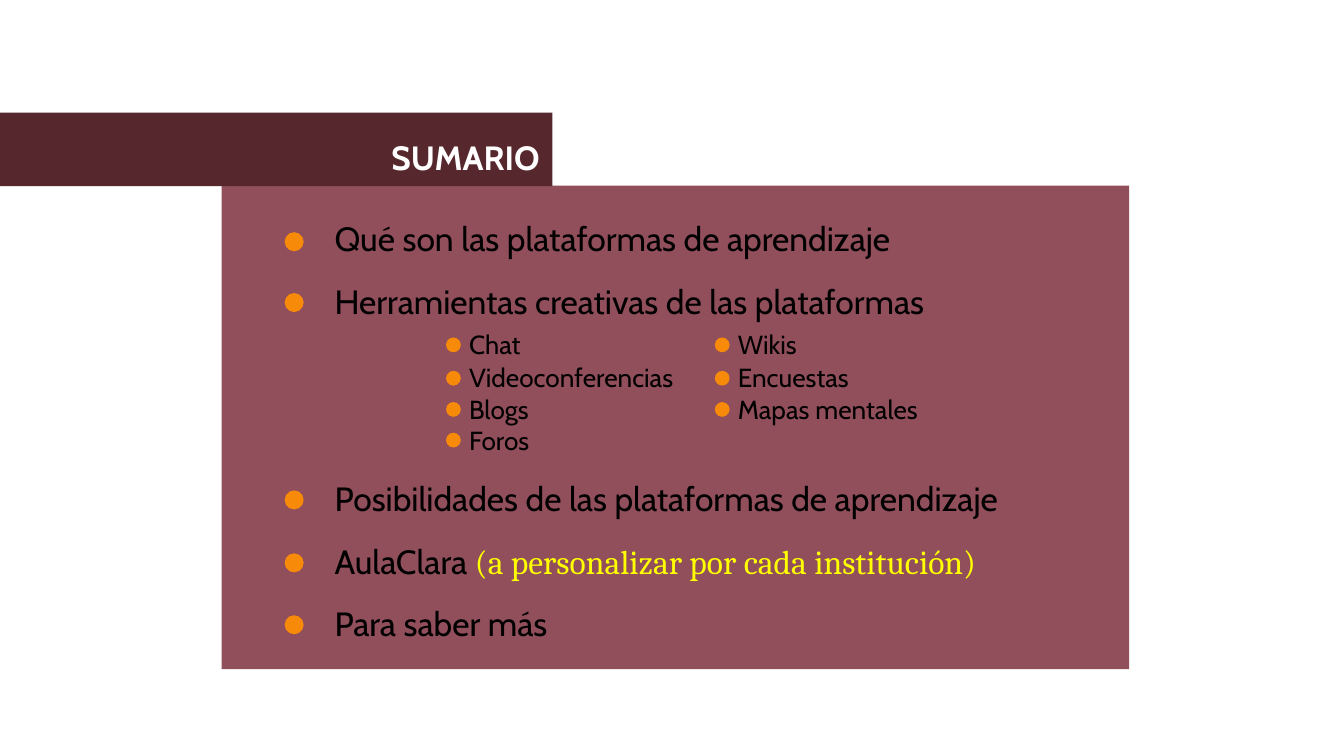
from lxml import etree
from pptx import Presentation
from pptx.dml.color import RGBColor
from pptx.enum import shapes, text
from pptx.oxml import ns
from pptx.util import Cm, Pt

WINE = RGBColor(0x56, 0x28, 0x2D)
ROSE = RGBColor(0x91, 0x4E, 0x5B)
ORANGE = RGBColor(0xF7, 0x8A, 0x08)
YELLOW = RGBColor(0xFF, 0xFF, 0x00)
BLACK = RGBColor(0, 0, 0)
WHITE = RGBColor(0xFF, 0xFF, 0xFF)

TAB_SIZE = 2.54
TOOL_DOT_X = (4.24, 9.32)

# Topics before and after the tools: dot offset in the panel, space before, runs
OPENING = [
    (0.88, 0, [("Qué son las plataformas de aprendizaje", {})]),
    (2.03, 12, [("Herramientas creativas de las plataformas", {})]),
]
CLOSING = [
    (5.76, 12, [("Posibilidades de las plataformas de aprendizaje", {})]),
    (6.95, 12, [("AulaClara ", {}),
                ("(a personalizar por cada institución)",
                 {"font": "Cambria", "color": YELLOW})]),
    (8.12, 12, [("Para saber más", {})]),
]
# Tools: dot offset in the panel, space before, names at the first and third tab
TOOLS = [
    (2.87, 4, "\tChat\t\tWikis"),
    (3.5, 1, "\tVideoconferencias\tEncuestas"),
    (4.09, 0, "\tBlogs\t\tMapas mentales"),
    (4.67, 0, "\tForos"),
]


def add_run(p, content, size=18, font="Cabin", color=BLACK, bold=False):
    r = p.add_run()
    r.text = content
    r.font.size = Pt(size)
    r.font.name = font
    r.font.color.rgb = color
    r.font.bold = bold


def add_filled(slide, kind, x, y, w, h, color):
    s = slide.shapes.add_shape(kind, Cm(x), Cm(y), Cm(w), Cm(h))
    s.shadow.inherit = False
    s.fill.solid()
    s.fill.fore_color.rgb = color
    s.line.fill.background()


def add_dot(slide, x, y, size):
    add_filled(slide, shapes.MSO_SHAPE.OVAL, x, y, size, size, ORANGE)


def place(slide, sp, x, y, w, h):
    """Move a placeholder into a box, in front of the shapes drawn so far."""
    slide.shapes._spTree.append(sp._element)
    sp.left, sp.top, sp.width, sp.height = Cm(x), Cm(y), Cm(w), Cm(h)
    tf = sp.text_frame
    tf.word_wrap = True
    tf.auto_size = text.MSO_AUTO_SIZE.NONE
    tf.vertical_anchor = text.MSO_ANCHOR.TOP
    return tf


def add_line(tf, space_before):
    """Return a new unbulleted paragraph with an even tab grid."""
    p = tf.paragraphs[0] if not tf.paragraphs[0].runs else tf.add_paragraph()
    p.line_spacing = 1.0
    p.space_before = Pt(space_before)
    pPr = p._p.get_or_add_pPr()
    pPr.set("marL", "0")
    pPr.set("indent", "0")
    pPr.set("defTabSz", str(Cm(TAB_SIZE)))
    etree.SubElement(pPr, ns.qn("a:buNone"))
    return p


def add_title_bar(slide, x, y, w, h):
    add_filled(slide, shapes.MSO_SHAPE.RECTANGLE, x, y, w, h, WINE)
    tf = place(slide, slide.shapes.title, x + 4.57, y + 0.21, w - 4.56, 0.91)
    tf.margin_left = tf.margin_right = Cm(0.25)
    tf.margin_top = tf.margin_bottom = Cm(0.25)
    p = tf.paragraphs[0]
    p.alignment = text.PP_ALIGN.RIGHT
    add_run(p, "SUMARIO", color=WHITE, bold=True)


def add_summary_panel(slide, x, y, w, h):
    add_filled(slide, shapes.MSO_SHAPE.RECTANGLE, x, y, w, h, ROSE)
    tf = place(slide, slide.placeholders[1], x + 1.88, y + 0.48, w - 3.56, h - 0.76)

    def add_topics(topics):
        for dot_y, before, runs in topics:
            p = add_line(tf, before)
            for content, fmt in runs:
                add_run(p, content, **fmt)
            add_dot(slide, x + 1.19, y + dot_y, 0.36)

    add_topics(OPENING)
    for dot_y, before, names in TOOLS:
        add_run(add_line(tf, before), names, size=14)
        for dot_x, _ in zip(TOOL_DOT_X, names.split()):
            add_dot(slide, x + dot_x, y + dot_y, 0.28)
    add_topics(CLOSING)


def main():
    prs = Presentation()
    prs.slide_width, prs.slide_height = Cm(25.4), Cm(14.29)
    slide = prs.slides.add_slide(prs.slide_layouts[1])
    add_summary_panel(slide, 4.19, 3.51, 17.15, 9.14)
    add_title_bar(slide, 0, 2.13, 10.44, 1.39)
    prs.save("out.pptx")


if __name__ == "__main__":
    main()
